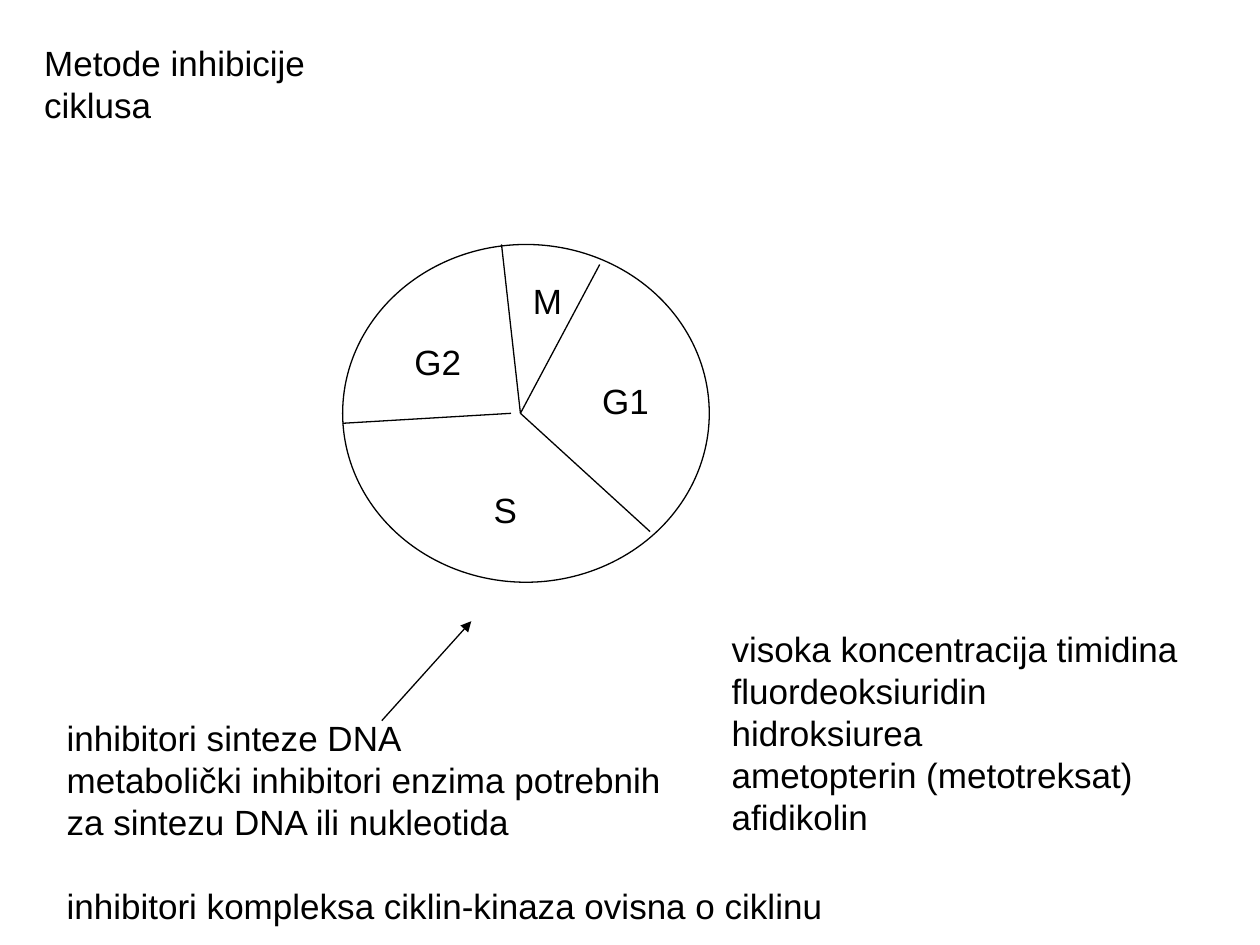
from lxml.etree import SubElement
from pptx import Presentation
from pptx.dml.color import RGBColor
from pptx.enum.shapes import MSO_CONNECTOR as CONN, MSO_SHAPE as SHAPE
from pptx.enum.text import MSO_ANCHOR as ANCHOR, MSO_AUTO_SIZE as AUTO, PP_ALIGN as ALIGN
from pptx.oxml.ns import qn
from pptx.util import Pt

BLACK, WHITE = "000000", "FFFFFF"
FONT = {"name": "Arial", "size": Pt(20), "bold": False}
FRAME = {"auto_size": AUTO.SHAPE_TO_FIT_TEXT, "vertical_anchor": ANCHOR.TOP}
PARAGRAPH = {"alignment": ALIGN.LEFT, "space_before": Pt(0), "line_spacing": 1.0}


def color(hex_text):
    return RGBColor.from_string(hex_text)


def set_all(obj, values):
    for name, value in values.items():
        setattr(obj, name, value)


def place(sp, x, y, w, h):
    set_all(sp, {"left": Pt(x), "top": Pt(y), "width": Pt(w), "height": Pt(h)})


def write(sp, lines, wrap=False):
    tf = sp.text_frame
    set_all(tf, {**FRAME, "word_wrap": wrap})
    for i, line in enumerate(lines):
        p = tf.add_paragraph() if i else tf.paragraphs[0]
        set_all(p, PARAGRAPH)
        r = p.add_run()
        r.text = line
        set_all(r.font, FONT)
        r.font.color.rgb = color(BLACK)
    return tf


def add_text(s, box, lines, wrap=False):
    return write(s.shapes.add_textbox(*map(Pt, box)), lines, wrap)


def style_line(line):
    line.color.rgb = color(BLACK)
    line.width = Pt(0.75)


def add_circle(s, box):
    sp = s.shapes.add_shape(SHAPE.OVAL, *map(Pt, box))
    sp.shadow.inherit = False
    sp.fill.solid()
    sp.fill.fore_color.rgb = color(WHITE)
    style_line(sp.line)


def add_line(s, start, end, arrow=False):
    sp = s.shapes.add_connector(CONN.STRAIGHT, *map(Pt, start + end))
    style_line(sp.line)
    if arrow:
        SubElement(sp.line._get_or_add_ln(), qn("a:tailEnd"), type="triangle")
    SubElement(sp._element.spPr, qn("a:effectLst"))


def main():
    prs = Presentation()
    set_all(prs, {"slide_width": Pt(720), "slide_height": Pt(540)})
    s = prs.slides.add_slide(prs.slide_layouts[5])

    # Title
    title = s.shapes.title
    place(title, 18, 20.2, 230.4, 31)
    write(title, ["Metode inhibicije ciklusa"])

    # Cell cycle with its phase borders
    add_circle(s, (195.8, 139.7, 209.5, 193))
    center = (297.4, 236.2)
    for start, end in [(center, (342.7, 151.2)), (center, (371.5, 303.8)),
                       ((292, 236.2), (195.8, 241.9)), (center, (286.6, 139.7))]:
        add_line(s, start, end)

    # Phase names
    for name, x, y, w in [("G1", 337, 213.1, 41), ("S", 275, 275.8, 28),
                          ("G2", 229.7, 190.8, 41), ("M", 297.4, 156.2, 31)]:
        add_text(s, (x, y, w, 31), [name])

    # Inhibitors acting on the S phase
    add_line(s, (218.2, 411.8), (269.3, 355), arrow=True)
    tf = add_text(s, (31, 406.1, 450.7, 128.2), [
        "inhibitori sinteze DNA",
        "metabolički inhibitori enzima potrebnih",
        "za sintezu DNA ili nukleotida",
        "inhibitori kompleksa ciklin-kinaza ovisna o ciklinu"])
    tf.paragraphs[-1].space_before = Pt(24)

    # Examples
    add_text(s, (411, 355, 295.2, 127.4), [
        "visoka koncentracija timidina", "fluordeoksiuridin", "hidroksiurea",
        "ametopterin (metotreksat)", "afidikolin"], wrap=True)

    prs.save("out.pptx")


if __name__ == "__main__":
    main()
